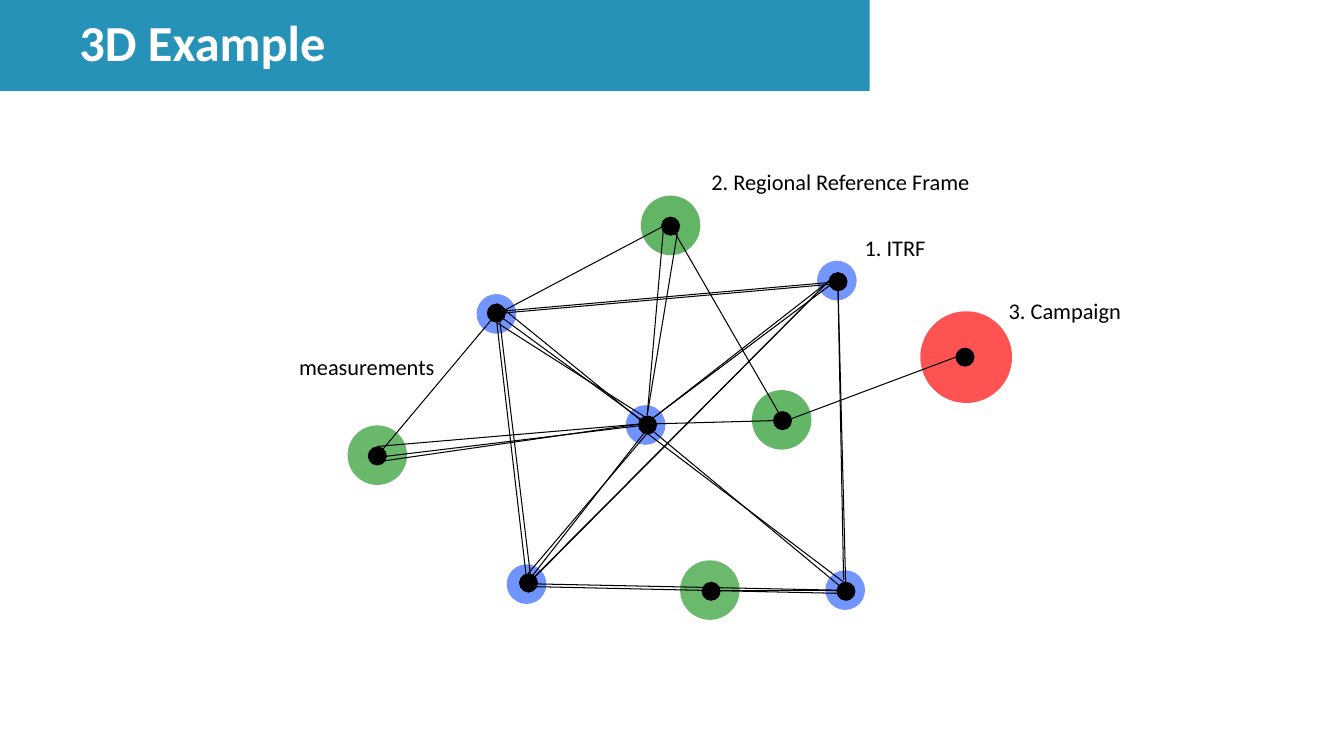
import pptx
import pptx.util
import pptx.dml.color
import pptx.enum.shapes
import pptx.enum.text
import pptx.oxml
import pptx.oxml.ns
import lxml.etree

Cm = pptx.util.Cm
Pt = pptx.util.Pt
kinds = pptx.enum.shapes.MSO_SHAPE
anchors = pptx.enum.text.MSO_ANCHOR

deck = pptx.Presentation()
deck.slide_width = Cm(33.87)
deck.slide_height = Cm(19.05)
slide = deck.slides.add_slide(deck.slide_layouts[6])


def paint(part, color, alpha=100):
    part.solid()
    part.fore_color.rgb = pptx.dml.color.RGBColor.from_string(color)
    if alpha < 100:
        tone = part._xPr.find(".//" + pptx.oxml.ns.qn("a:srgbClr"))
        lxml.etree.SubElement(tone, pptx.oxml.ns.qn("a:alpha")).set("val", str(alpha * 1000))


def write(shape, text, size=16, color="000000", bold=False, wrap=False, left=0.25,
          anchor=anchors.TOP, pitch=1.0):
    frame = shape.text_frame
    frame.word_wrap = wrap
    frame.vertical_anchor = anchor
    frame.margin_left, frame.margin_right = Cm(left), Cm(0.25)
    frame.margin_top = frame.margin_bottom = Cm(0.13)
    para = frame.paragraphs[0]
    para.alignment = pptx.enum.text.PP_ALIGN.LEFT
    para.line_spacing = pitch
    run = para.add_run()
    run.text = text
    run.font.name = "Calibri"
    run.font.size = Pt(size)
    run.font.bold = bold
    paint(run.font.fill, color)


blue, green, red, black = "3366FF", "1C9420", "FF0000", "000000"
halos = [
    (16.27, 10.71, 1.0, blue, 70),
    (12.51, 7.91, 1.0, blue, 69),
    (21.09, 7.07, 1.0, blue, 68),
    (21.3, 14.87, 1.0, blue, 69),
    (13.27, 14.72, 1.0, blue, 70),
    (16.9, 5.68, 1.5, green, 69),
    (17.89, 14.87, 1.5, green, 65),
    (9.51, 11.47, 1.5, green, 66),
    (19.7, 10.58, 1.5, green, 68),
    (24.35, 9.0, 2.31, red, 68),
]
spots = [
    (16.9, 5.7), (12.51, 7.89), (9.51, 11.49), (13.32, 14.69), (17.92, 14.9),
    (21.32, 14.9), (19.72, 10.6), (16.32, 10.71), (24.32, 9.0), (21.12, 7.1),
]
dots = [(x, y, 0.48, black, 100) for x, y in spots]

for x, y, size, color, alpha in halos + dots:
    disc = slide.shapes.add_shape(kinds.OVAL, Cm(x - size / 2), Cm(y - size / 2), Cm(size), Cm(size))
    disc.shadow.inherit = False
    disc.line.fill.background()
    paint(disc.fill, color, alpha)

links = [
    (12.37, 7.8, 16.18, 10.59),
    (12.37, 8.0, 16.74, 5.69),
    (12.6, 7.8, 9.53, 11.46),
    (16.28, 10.85, 13.18, 14.81),
    (21.18, 6.99, 16.38, 10.59),
    (21.18, 14.78, 16.28, 10.72),
    (19.84, 10.59, 16.13, 10.69),
    (19.84, 10.59, 24.38, 8.89),
    (12.55, 7.85, 21.23, 7.09),
    (17.73, 14.88, 21.13, 14.88),
    (9.63, 11.51, 16.43, 10.69),
    (19.79, 10.69, 16.89, 5.66),
    (16.08, 10.69, 9.5, 11.25),
    (16.08, 10.69, 9.35, 11.66),
    (16.54, 10.69, 12.52, 8.13),
    (16.33, 10.74, 12.52, 7.65),
    (16.31, 10.46, 17.07, 5.87),
    (16.31, 10.46, 16.74, 5.54),
    (16.31, 10.92, 13.31, 14.45),
    (16.31, 10.92, 21.54, 14.88),
    (16.48, 10.52, 20.88, 7.09),
    (21.11, 6.86, 21.26, 14.61),
    (21.11, 6.86, 21.31, 14.66),
    (12.32, 7.92, 20.98, 7.16),
    (13.34, 14.71, 21.54, 14.88),
    (13.34, 14.78, 21.54, 14.96),
    (13.31, 14.94, 12.52, 8.13),
    (13.39, 14.68, 12.57, 7.87),
    (13.34, 14.66, 20.88, 7.09),
    (13.44, 14.58, 20.96, 7.01),
]
for ends in links:
    link = slide.shapes.add_connector(pptx.enum.shapes.MSO_CONNECTOR.STRAIGHT, *map(Cm, ends))
    link.line.width = Pt(0.75)
    paint(link.line.fill, black)
    lxml.etree.SubElement(link._element.spPr, pptx.oxml.ns.qn("a:effectLst"))

labels = [
    ("measurements", 7.29, 8.76, 3.96),
    ("1. ITRF", 21.54, 5.77, 2.06),
    ("2. Regional Reference Frame", 17.68, 4.11, 7.11),
    ("3. Campaign", 25.17, 7.37, 3.38),
]
for text, x, y, width in labels:
    write(slide.shapes.add_textbox(Cm(x), Cm(y), Cm(width), Cm(0.94)), text)

banner = slide.shapes.add_shape(kinds.RECTANGLE, 0, 0, Cm(21.92), Cm(2.29))
banner.shadow.inherit = False
banner.line.fill.background()
paint(banner.fill, "2792B8")
write(banner, "3D Example", size=36, color="FFFFFF", bold=True, wrap=True, left=2,
      anchor=anchors.MIDDLE, pitch=0.9)

deck.save("out.pptx")
